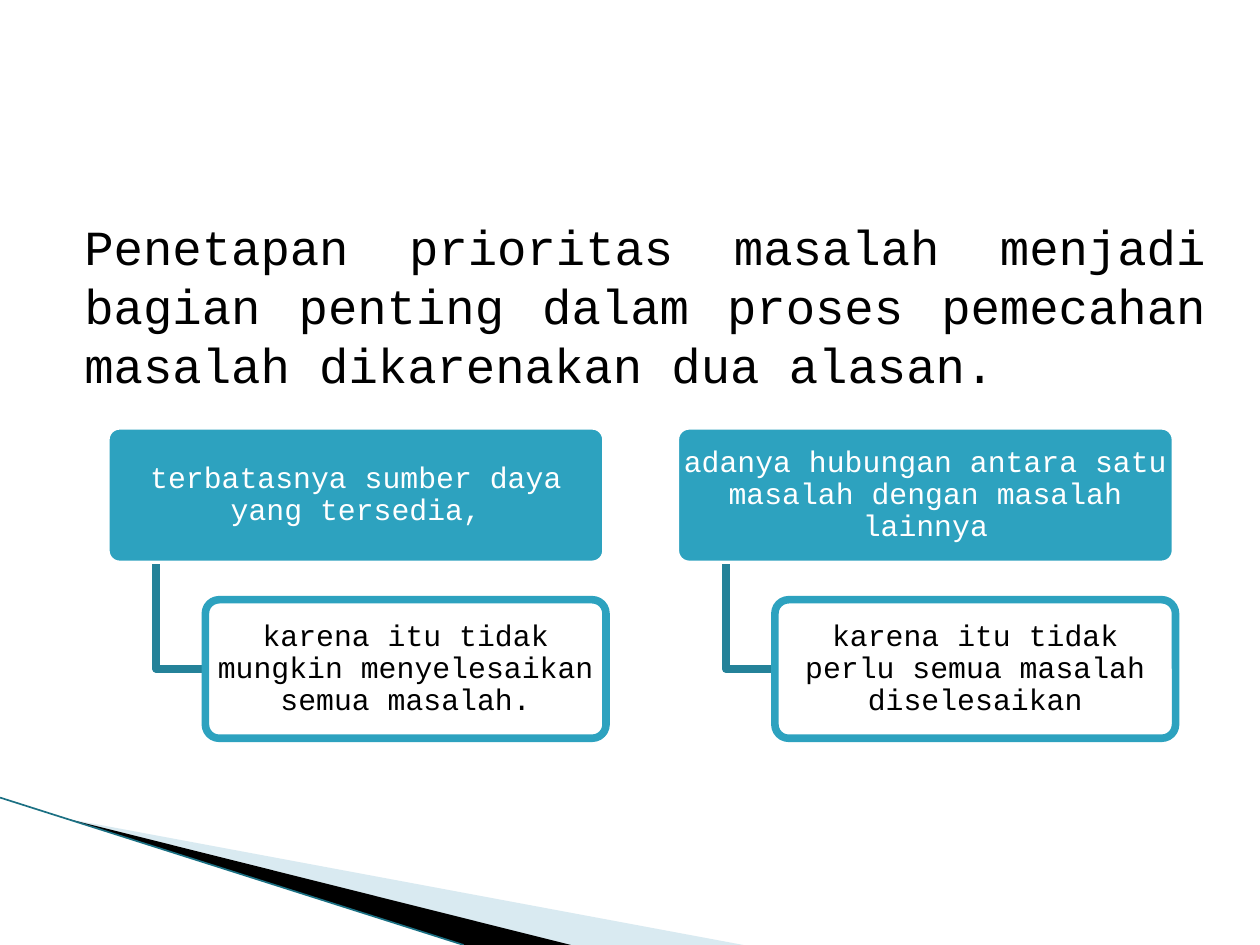
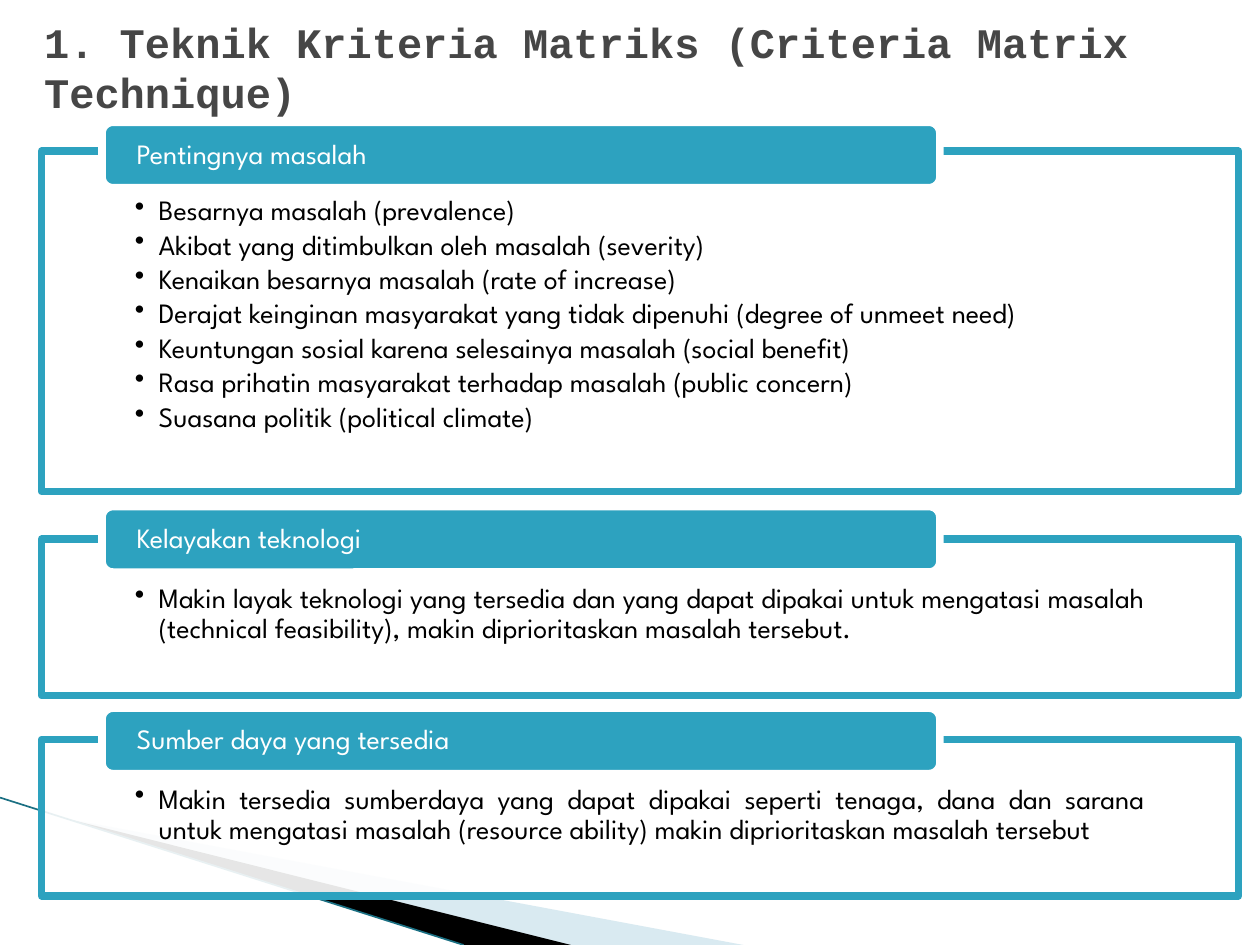
from lxml import etree
from pptx import Presentation
from pptx.dml.color import RGBColor
from pptx.enum.shapes import MSO_CONNECTOR, MSO_SHAPE
from pptx.enum.text import MSO_ANCHOR, MSO_AUTO_SIZE, PP_ALIGN
from pptx.oxml.ns import qn
from pptx.util import Inches, Pt

STRAIGHT = MSO_CONNECTOR.STRAIGHT
RECT, ROUNDED = MSO_SHAPE.RECTANGLE, MSO_SHAPE.ROUNDED_RECTANGLE
TOP, MIDDLE = MSO_ANCHOR.TOP, MSO_ANCHOR.MIDDLE
LEFT, CENTER, JUSTIFY = PP_ALIGN.LEFT, PP_ALIGN.CENTER, PP_ALIGN.JUSTIFY
FIXED_SIZE = MSO_AUTO_SIZE.NONE

WHITE = RGBColor(0xFF, 0xFF, 0xFF)
BLACK = RGBColor(0x00, 0x00, 0x00)
TITLE_GREY = RGBColor(0x46, 0x46, 0x46)
TEAL = RGBColor(0x2D, 0xA2, 0xBF)
DARK_TEAL = RGBColor(0x24, 0x82, 0x99)
EDGE_TEAL = RGBColor(0x1B, 0x70, 0x83)
PALE_BLUE = RGBColor(0xA0, 0xCB, 0xDC)

MONO, SANS = "Courier New", "League Spartan"
OUTLINE = Pt(4.33)
HEADING_SPACING, BOX_SPACING = 1.0, 0.9

REASONS = [
    ("terbatasnya sumber daya yang tersedia,",
     "karena itu tidak mungkin menyelesaikan semua masalah."),
    ("adanya hubungan antara satu masalah dengan masalah lainnya",
     "karena itu tidak perlu semua masalah diselesaikan"),
]

CRITERIA = [
    (0.97, 1.2, 2.7, "Pentingnya masalah", [
        "Besarnya masalah (prevalence)",
        "Akibat yang ditimbulkan oleh masalah (severity)",
        "Kenaikan besarnya masalah (rate of increase)",
        "Derajat keinginan masyarakat yang tidak dipenuhi (degree of unmeet need)",
        "Keuntungan sosial karena selesainya masalah (social benefit)",
        "Rasa prihatin masyarakat terhadap masalah (public concern)",
        "Suasana politik (political climate)",
    ]),
    (4.02, 4.28, 1.24, "Kelayakan teknologi", [
        "Makin layak teknologi yang tersedia dan yang dapat dipakai untuk mengatasi "
        "masalah (technical feasibility), makin diprioritaskan masalah tersebut.",
    ]),
    (5.62, 5.87, 1.24, "Sumber daya yang tersedia", [
        "Makin tersedia sumberdaya yang dapat dipakai seperti tenaga, dana dan sarana "
        "untuk mengatasi masalah (resource ability) makin diprioritaskan masalah tersebut",
    ]),
]


def set_opacity(shape, percent):
    """Make the solid fill of a shape partly transparent."""
    colour = shape.element.spPr.find(qn("a:solidFill")).find(qn("a:srgbClr"))
    etree.SubElement(colour, qn("a:alpha")).set("val", str(percent * 1000))


def set_bullet(paragraph, margin, hanging=0, char=None):
    """Set the indents of a paragraph and its bullet, or none."""
    properties = paragraph._p.get_or_add_pPr()
    properties.set("marL", str(Inches(margin)))
    properties.set("indent", str(-Inches(hanging)))
    if char:
        etree.SubElement(properties, qn("a:buChar")).set("char", char)
    else:
        etree.SubElement(properties, qn("a:buNone"))


def format_text(paragraph, font, size, colour, align, spacing, bold=False):
    """Format a paragraph and its runs."""
    paragraph.alignment = align
    paragraph.line_spacing = spacing
    for run in paragraph.runs:
        run.font.name = font
        run.font.size = Pt(size)
        run.font.color.rgb = colour
        run.font.bold = bold


def set_frame(frame, anchor, side, top, bottom):
    """Set wrapping, anchor and insets of a text frame."""
    frame.word_wrap = True
    frame.auto_size = FIXED_SIZE
    frame.vertical_anchor = anchor
    frame.margin_left = frame.margin_right = Inches(side)
    frame.margin_top, frame.margin_bottom = Inches(top), Inches(bottom)


def place(shape, left, top, width, height):
    """Move a placeholder to a box in inches."""
    shape.left, shape.top = Inches(left), Inches(top)
    shape.width, shape.height = Inches(width), Inches(height)


def add_box(slide, kind, box, fill, line):
    """Add an outlined box without shadow."""
    shape = slide.shapes.add_shape(kind, *map(Inches, box))
    shape.shadow.inherit = False
    shape.fill.solid()
    shape.fill.fore_color.rgb = fill
    shape.line.color.rgb = line
    shape.line.width = OUTLINE
    return shape


def add_outline(slide, points, close):
    """Add a freeform through points given in inches."""
    start, *rest = [(Inches(x), Inches(y)) for x, y in points]
    builder = slide.shapes.build_freeform(*start)
    builder.add_line_segments(rest, close=close)
    shape = builder.convert_to_shape()
    shape.shadow.inherit = False
    return shape


def add_corner_band(slide):
    """Draw the shared wedges and edge line at the lower left."""
    tip = (0.54, 6.5)
    for colour, right, left in ((PALE_BLUE, 5.9, 4.52), (BLACK, 4.53, 3.68)):
        wedge = add_outline(slide, [tip, (right, 7.5), (left, 7.5)], close=True)
        wedge.fill.solid()
        wedge.fill.fore_color.rgb = colour
        wedge.line.fill.background()
        if colour == PALE_BLUE:
            set_opacity(wedge, 40)
    edge = slide.shapes.add_connector(
        STRAIGHT, 0, Inches(6.33), Inches(3.68), Inches(7.5))
    edge.line.color.rgb = EDGE_TEAL
    edge.line.width = Pt(0.95)
    etree.SubElement(edge.element.spPr, qn("a:effectLst"))


def add_reason(slide, left, top, reason, consequence):
    """Draw a reason with its consequence hanging below it."""
    width, height, step = 3.97, 1.1, 1.38
    stem, child = left + 0.4, left + 0.79
    reason_box = add_box(slide, ROUNDED, (left, top, width, height), TEAL, WHITE)
    middle = top + step + height / 2
    elbow = add_outline(
        slide, [(stem, top + height), (stem, middle), (child, middle)], close=False)
    elbow.fill.background()
    elbow.line.color.rgb = DARK_TEAL
    elbow.line.width = OUTLINE
    consequence_box = add_box(
        slide, ROUNDED, (child, top + step, 3.18, height), WHITE, TEAL)
    set_opacity(consequence_box, 90)
    for box, text, colour in ((reason_box, reason, WHITE),
                              (consequence_box, consequence, BLACK)):
        box.adjustments[0] = 0.1
        set_frame(box.text_frame, MIDDLE, 0.02, 0.02, 0.02)
        box.text_frame.text = text
        format_text(box.text_frame.paragraphs[0], MONO, 17, colour, CENTER, BOX_SPACING)


def add_criterion(slide, left, tab_top, top, height, heading, points):
    """Draw a bulleted panel with its heading tab on the upper edge."""
    panel = add_box(slide, RECT, (left, top, 9.5, height), WHITE, TEAL)
    set_opacity(panel, 90)
    frame = panel.text_frame
    set_frame(frame, TOP, 0.74, 0.36, 0.12)
    frame.text = "\n".join(points)
    for paragraph in frame.paragraphs:
        set_bullet(paragraph, 0.19, 0.19, "•")
        format_text(paragraph, SANS, 16, BLACK, JUSTIFY, BOX_SPACING)
        paragraph.space_after = Pt(2.4)
    tab = add_box(slide, ROUNDED, (left + 0.48, tab_top, 6.65, 0.52), TEAL, WHITE)
    set_frame(tab.text_frame, MIDDLE, 0.25, 0, 0)
    tab.text_frame.text = heading
    format_text(tab.text_frame.paragraphs[0], SANS, 16, WHITE, LEFT, BOX_SPACING)


def build_reasons_slide(prs):
    """Build the slide on the two reasons for setting priorities."""
    slide = prs.slides.add_slide(prs.slide_layouts[1])
    title, intro = slide.placeholders
    title.element.getparent().remove(title.element)
    add_corner_band(slide)
    place(intro, 0.17, 1.67, 9.5, 1.5)
    set_frame(intro.text_frame, TOP, 0.1, 0.05, 0.05)
    intro.text_frame.text = (
        "Penetapan prioritas masalah menjadi bagian penting dalam proses "
        "pemecahan masalah dikarenakan dua alasan.")
    paragraph = intro.text_frame.paragraphs[0]
    set_bullet(paragraph, 0.4)
    format_text(paragraph, MONO, 28, BLACK, JUSTIFY, HEADING_SPACING)
    paragraph.space_before = Pt(0)
    for column, (reason, consequence) in enumerate(REASONS):
        add_reason(slide, 0.84 + 4.52 * column, 3.38, reason, consequence)


def build_criteria_slide(prs):
    """Build the slide on the criteria matrix technique."""
    slide = prs.slides.add_slide(prs.slide_layouts[5])
    title = slide.shapes.title
    add_corner_band(slide)
    place(title, 0.25, 0.14, 9.42, 0.78)
    set_frame(title.text_frame, MIDDLE, 0.1, 0.05, 0.05)
    title.text_frame.text = "1. Teknik Kriteria Matriks (Criteria Matrix Technique)"
    format_text(title.text_frame.paragraphs[0], MONO, 24, TITLE_GREY, LEFT,
                HEADING_SPACING, bold=True)
    for criterion in CRITERIA:
        add_criterion(slide, 0.33, *criterion)


def main():
    """Build and save the presentation."""
    prs = Presentation()
    prs.slide_width, prs.slide_height = Inches(10), Inches(7.5)
    build_reasons_slide(prs)
    build_criteria_slide(prs)
    prs.save("out.pptx")


if __name__ == "__main__":
    main()
